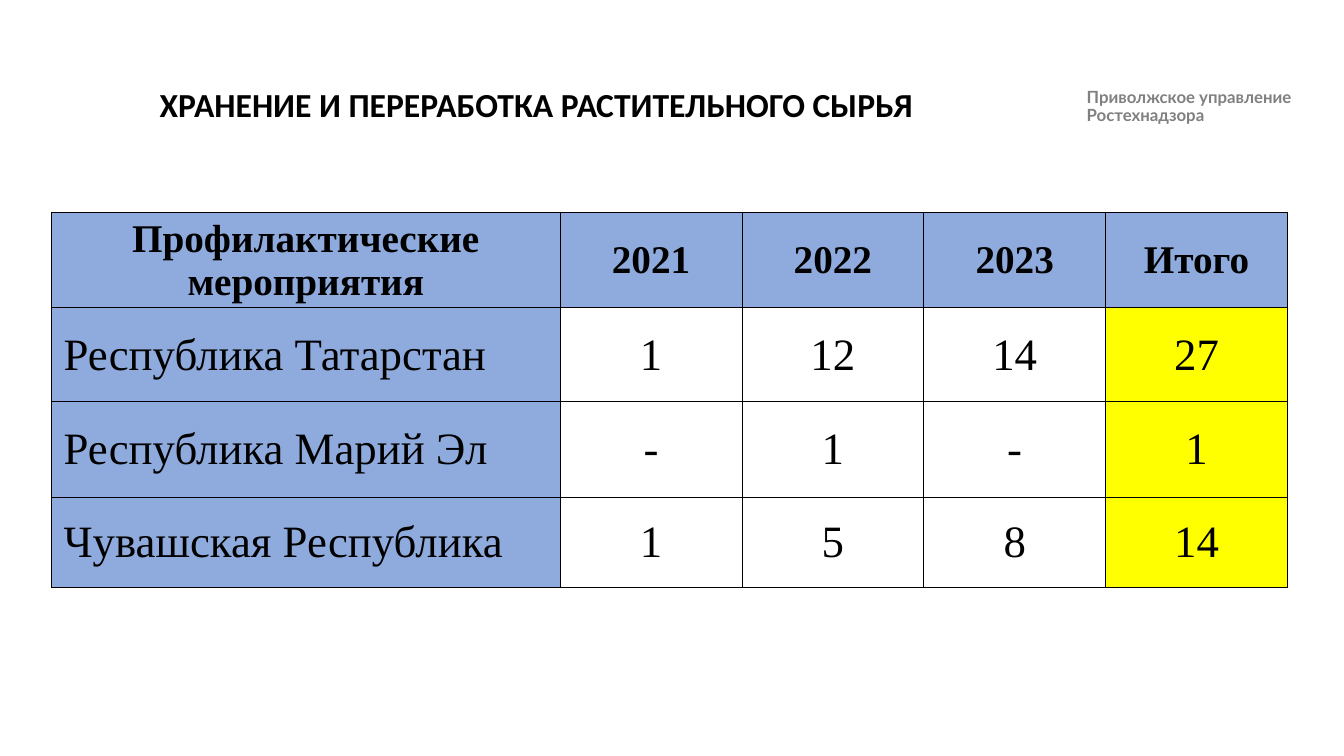
from lxml import etree
from pptx import Presentation
from pptx.dml.color import RGBColor
from pptx.enum.text import MSO_ANCHOR as Anchor, PP_ALIGN as Align
from pptx.oxml.ns import qn
from pptx.util import Pt

BLACK, GREY, BLUE, YELLOW = "000000", "808080", "8FAADC", "FFFF00"


def colour(code):
    return RGBColor.from_string(code)


class SlideBuilder:
    """Holds the table style and the current slide."""

    table_font = "Times New Roman"
    header_size, body_size = 28, 32
    border_width = 0.5

    def __init__(self, page):
        self.page = page

    def style(self, para, name, size, code, bold, align):
        para.alignment = align
        para.font.name, para.font.size, para.font.bold = name, Pt(size), bold
        para.font.color.rgb = colour(code)

    def text(self, lines, left, top, width, height, name, size, code,
             align=Align.LEFT, inset_left=7.2, inset_top=3.6):
        box = self.page.shapes.add_textbox(Pt(left), Pt(top), Pt(width), Pt(height))
        frame = box.text_frame
        frame.word_wrap = True
        frame.margin_left, frame.margin_top = Pt(inset_left), Pt(inset_top)
        frame.text = "\n".join(lines)
        for para in frame.paragraphs:
            para.line_spacing = 0.9
            self.style(para, name, size, code, True, align)

    def borders(self, cell):
        properties = cell._tc.get_or_add_tcPr()
        for index, side in enumerate(("lnL", "lnR", "lnT", "lnB")):
            line = etree.Element(qn("a:" + side), w=str(Pt(self.border_width)))
            fill = etree.SubElement(line, qn("a:solidFill"))
            etree.SubElement(fill, qn("a:srgbClr"), val=BLACK)
            properties.insert(index, line)

    def cell(self, cell, value, header, label, fill):
        cell.text = value
        cell.vertical_anchor = Anchor.MIDDLE
        cell.margin_left = Pt(8.7 if label else 0.7)
        cell.margin_right = cell.margin_top = Pt(0.7)
        cell.margin_bottom = Pt(0)
        self.style(cell.text_frame.paragraphs[0], self.table_font,
                   self.header_size if header else self.body_size,
                   BLACK, header, Align.LEFT if label else Align.CENTER)
        if fill:
            cell.fill.solid()
            cell.fill.fore_color.rgb = colour(fill)
        else:
            cell.fill.background()
        self.borders(cell)

    def table(self, rows, left, top, widths, heights):
        frame = self.page.shapes.add_table(
            len(rows), len(widths), Pt(left), Pt(top),
            Pt(sum(widths)), Pt(sum(heights)))
        table = frame.table
        table.first_row = table.horz_banding = False
        for column, width in zip(table.columns, widths):
            column.width = Pt(width)
        for row, height in zip(table.rows, heights):
            row.height = Pt(height)
        last = len(widths) - 1
        for r, values in enumerate(rows):
            for c, value in enumerate(values):
                header, label = r == 0, r > 0 and c == 0
                fill = BLUE if header or label else YELLOW if c == last else None
                self.cell(table.cell(r, c), value, header, label, fill)


def main():
    deck = Presentation()
    deck.slide_width, deck.slide_height = Pt(960), Pt(540)
    slide = SlideBuilder(deck.slides.add_slide(deck.slide_layouts[6]))

    # Agency name and title
    slide.text(["Приволжское управление", "Ростехнадзора"],
               684, 59.8, 276, 33, "Lato", 12, GREY, inset_left=92.2)
    slide.text(["ХРАНЕНИЕ И ПЕРЕРАБОТКА РАСТИТЕЛЬНОГО СЫРЬЯ"],
               57.6, 57, 651, 67.7, "Calibri", 24, BLACK, Align.CENTER,
               inset_top=6)

    # Preventive measures by region and year
    slide.table([
        ["Профилактические мероприятия", "2021", "2022", "2023", "Итого"],
        ["Республика Татарстан", "1", "12", "14", "27"],
        ["Республика Марий Эл", "-", "1", "-", "1"],
        ["Чувашская Республика", "1", "5", "8", "14"],
    ], 36.7, 151.8, [363.4] + [129.9] * 4, [62.5, 67.2, 68, 64.3])

    deck.save("out.pptx")


if __name__ == "__main__":
    main()
